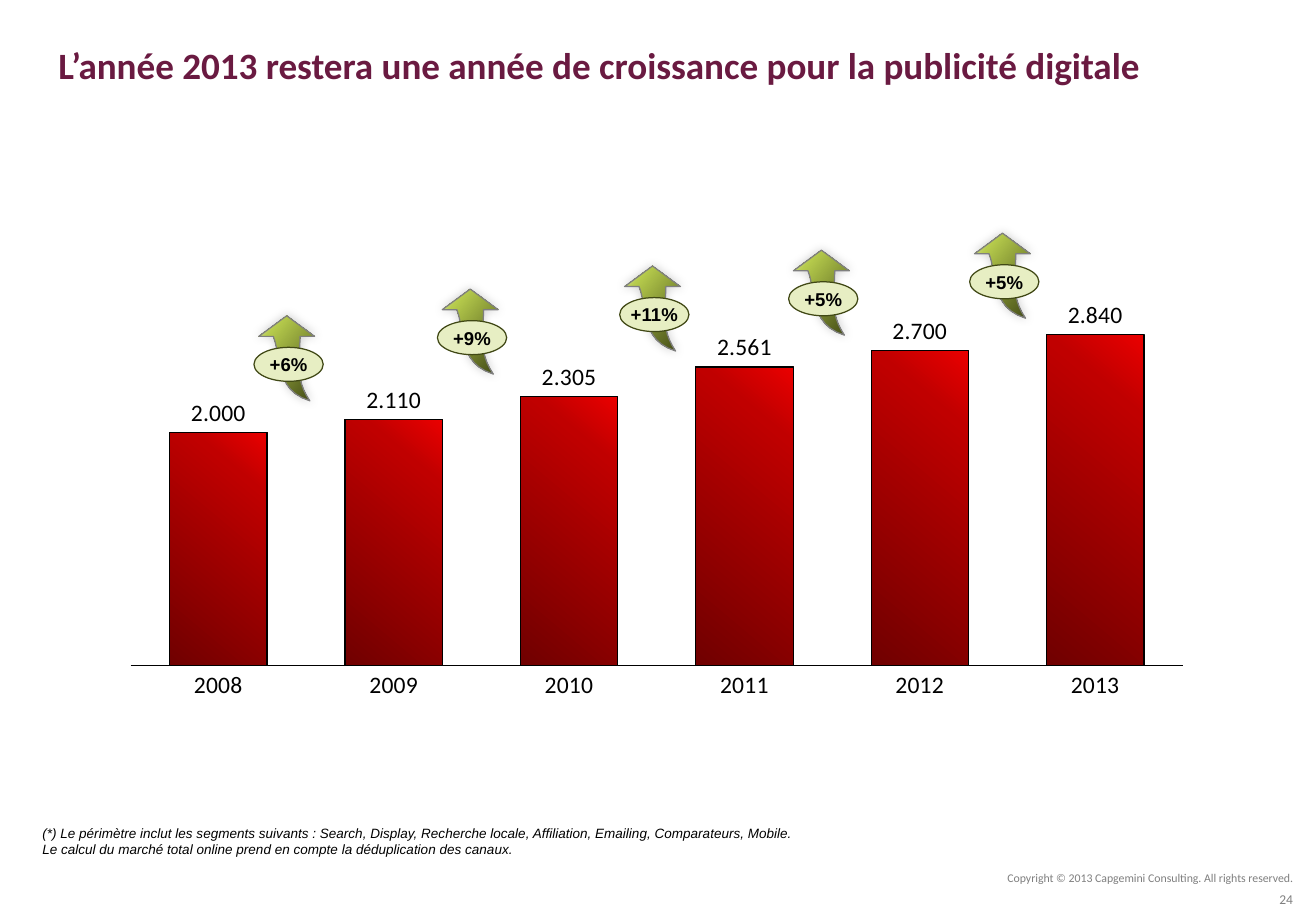
from copy import deepcopy

from lxml import etree
from pptx import Presentation
from pptx.chart import data as chart_data
from pptx.dml.color import RGBColor
from pptx.enum import chart as chart_enum, shapes, text
from pptx.oxml import ns
from pptx.util import Inches, Pt

TITLE = "L’année 2013 restera une année de croissance pour la publicité digitale"
MARKET = {"2008": 2.000, "2009": 2.110, "2010": 2.305,
          "2011": 2.561, "2012": 2.700, "2013": 2.840}
GROWTH = [("+6%", 2.36, 2.60), ("+9%", 3.87, 2.38), ("+11%", 5.37, 2.19),
          ("+5%", 6.76, 2.06), ("+5%", 8.25, 1.92)]
FOOTNOTE = ("(*) Le périmètre inclut les segments suivants : Search, Display, "
            "Recherche locale, Affiliation, Emailing, Comparateurs, Mobile. "
            "Le calcul du marché total online prend en compte la déduplication des canaux.")
COPYRIGHT = "Copyright © 2013 Capgemini Consulting. All rights reserved."
PAGE_NUMBER = "24"

PLUM = RGBColor(0x6A, 0x1A, 0x41)
BLACK = RGBColor(0, 0, 0)
GREY = RGBColor(0x7F, 0x7F, 0x7F)
OLIVE = RGBColor(0x40, 0x48, 0x15)
PALE_GREEN = RGBColor(0xE7, 0xEE, 0xC3)
RED_STOPS = [(0, RGBColor(0x70, 0, 0)), (0.8, RGBColor(0xC0, 0, 0)),
             (1, RGBColor(0xEA, 0, 0))]
GREEN_STOPS = [(0, OLIVE), (0.8, RGBColor(0xB6, 0xCB, 0x4C)), (1, PALE_GREEN)]

CHART_LEFT, CHART_TOP, CHART_WIDTH, CHART_HEIGHT = 1.07, 2.2, 8.67, 3.8
PLOT_TOP, PLOT_HEIGHT, AXIS_MAXIMUM = 2.48, 3.0, 3.125

LEFT_EDGE = [(0.19, 0.70), (-0.10, 0.61), (-0.04, 0.35), (-0.11, 0.17)]
ARROW_HEAD = [(-0.23, 0.17), (0, 0), (0.23, 0.17)]
RIGHT_EDGE = [(0.11, 0.17), (0.11, 0.35), (0.06, 0.51), (0.19, 0.70)]
BADGE_X, BADGE_Y, BADGE_WIDTH, BADGE_HEIGHT = -0.27, 0.26, 0.57, 0.28


def set_font(font, name, size, color, bold=False, italic=False):
    font.name, font.size = name, Pt(size)
    font.bold, font.italic = bold, italic
    font.color.rgb = color


def set_line(line, color, width=0.75):
    line.color.rgb = color
    line.width = Pt(width)


def set_gradient(fill, element, stops, angle):
    fill.gradient()
    fill.gradient_angle = angle
    stop_list = element.find(".//" + ns.qn("a:gsLst"))
    stop_list.insert(1, deepcopy(stop_list[0]))
    for stop, (position, color) in zip(fill.gradient_stops, stops):
        stop.position = position
        stop.color.rgb = color


def curve(points, steps=12):
    for step in range(steps + 1):
        t = step / steps
        weights = ((1 - t) ** 3, 3 * t * (1 - t) ** 2, 3 * t * t * (1 - t), t ** 3)
        yield tuple(sum(w * p[axis] for w, p in zip(weights, points)) for axis in (0, 1))


def add_text(slide, content, box, name, size, color, align, italic=False,
             anchor=text.MSO_ANCHOR.MIDDLE):
    frame = slide.shapes.add_textbox(*map(Inches, box)).text_frame
    frame.word_wrap = True
    frame.vertical_anchor = anchor
    paragraph = frame.paragraphs[0]
    paragraph.text = content
    paragraph.alignment = align
    set_font(paragraph.font, name, size, color, italic=italic)


def add_title(slide):
    title = slide.shapes.title
    title.left, title.top, title.width, title.height = map(Inches, (0.38, 0.11, 10.45, 0.84))
    title.text_frame.vertical_anchor = text.MSO_ANCHOR.MIDDLE
    paragraph = title.text_frame.paragraphs[0]
    paragraph.text = TITLE
    paragraph.alignment = text.PP_ALIGN.LEFT
    set_font(paragraph.font, "Calibri", 22, PLUM, bold=True)


def add_market_chart(slide):
    data = chart_data.CategoryChartData(number_format="0.000")
    data.categories = list(MARKET)
    data.add_series("Publicité digitale", list(MARKET.values()))
    chart = slide.shapes.add_chart(
        chart_enum.XL_CHART_TYPE.COLUMN_CLUSTERED,
        *map(Inches, (CHART_LEFT, CHART_TOP, CHART_WIDTH, CHART_HEIGHT)), data).chart
    chart.has_legend = chart.has_title = False
    set_font(chart.font, "Calibri", 14, BLACK)

    values = chart.value_axis
    values.minimum_scale, values.maximum_scale = 0, AXIS_MAXIMUM
    values.has_major_gridlines = values.visible = False
    years = chart.category_axis
    years.major_tick_mark = chart_enum.XL_TICK_MARK.NONE
    set_line(years.format.line, BLACK)

    plot = chart.plots[0]
    plot.gap_width = 80
    plot.vary_by_categories = False
    plot.has_data_labels = True
    labels = plot.data_labels
    labels.show_value = True
    labels.number_format, labels.number_format_is_linked = "0.000", False
    labels.position = chart_enum.XL_LABEL_POSITION.OUTSIDE_END
    set_font(labels.font, "Calibri", 14, BLACK)
    series = plot.series[0]
    set_gradient(series.format.fill, series._element, RED_STOPS, 50)
    set_line(series.format.line, BLACK)

    plot_area = plot._element.getparent()
    for old_layout in plot_area.findall(ns.qn("c:layout")):
        plot_area.remove(old_layout)
    layout = etree.Element(ns.qn("c:layout"))
    manual = etree.SubElement(layout, ns.qn("c:manualLayout"))
    for tag, value in (("layoutTarget", "inner"), ("xMode", "edge"), ("yMode", "edge"),
                       ("x", 0), ("y", (PLOT_TOP - CHART_TOP) / CHART_HEIGHT),
                       ("w", 1), ("h", PLOT_HEIGHT / CHART_HEIGHT)):
        etree.SubElement(manual, ns.qn("c:" + tag)).set("val", str(value))
    plot_area.insert(0, layout)


def add_soft_shadow(shape):
    shape.shadow.inherit = False
    effects = shape._element.spPr.find(ns.qn("a:effectLst"))
    shadow = etree.SubElement(effects, ns.qn("a:outerShdw"), blurRad=str(Pt(6)),
                              dist="0", dir="13500000", rotWithShape="0")
    color = etree.SubElement(shadow, ns.qn("a:srgbClr"), val=str(BLACK))
    etree.SubElement(color, ns.qn("a:alpha"), val="20000")


def add_growth(slide, label, tip_x, tip_y):
    outline = [(Inches(tip_x + x), Inches(tip_y + y))
               for x, y in [*curve(LEFT_EDGE), *ARROW_HEAD, *curve(RIGHT_EDGE)]]
    builder = slide.shapes.build_freeform(*outline[0])
    builder.add_line_segments(outline[1:], close=True)
    arrow = builder.convert_to_shape()
    set_gradient(arrow.fill, arrow._element, GREEN_STOPS, 140)
    set_line(arrow.line, GREY)
    add_soft_shadow(arrow)

    badge = slide.shapes.add_shape(
        shapes.MSO_SHAPE.OVAL, Inches(tip_x + BADGE_X), Inches(tip_y + BADGE_Y),
        Inches(BADGE_WIDTH), Inches(BADGE_HEIGHT))
    badge.shadow.inherit = False
    badge.fill.solid()
    badge.fill.fore_color.rgb = PALE_GREEN
    set_line(badge.line, OLIVE, 0)
    frame = badge.text_frame
    frame.margin_left = frame.margin_right = frame.margin_top = frame.margin_bottom = 0
    frame.word_wrap = False
    frame.vertical_anchor = text.MSO_ANCHOR.MIDDLE
    paragraph = frame.paragraphs[0]
    paragraph.text = label
    paragraph.alignment = text.PP_ALIGN.CENTER
    set_font(paragraph.font, "Arial", 11, BLACK, bold=True)


def main():
    presentation = Presentation()
    presentation.slide_width, presentation.slide_height = Inches(10.83), Inches(7.5)
    slide = presentation.slides.add_slide(presentation.slide_layouts[5])
    add_title(slide)
    add_text(slide, FOOTNOTE, (0.25, 6.74, 6.45, 0.37), "Arial", 8, BLACK,
             text.PP_ALIGN.LEFT, italic=True, anchor=text.MSO_ANCHOR.TOP)
    add_text(slide, COPYRIGHT, (7.57, 7.12, 3.17, 0.22), "Calibri", 7, GREY,
             text.PP_ALIGN.RIGHT)
    add_text(slide, PAGE_NUMBER, (8.21, 7.34, 2.53, 0.13), "Calibri", 8, GREY,
             text.PP_ALIGN.RIGHT)
    add_market_chart(slide)
    for label, tip_x, tip_y in GROWTH:
        add_growth(slide, label, tip_x, tip_y)
    presentation.save("out.pptx")


if __name__ == "__main__":
    main()
